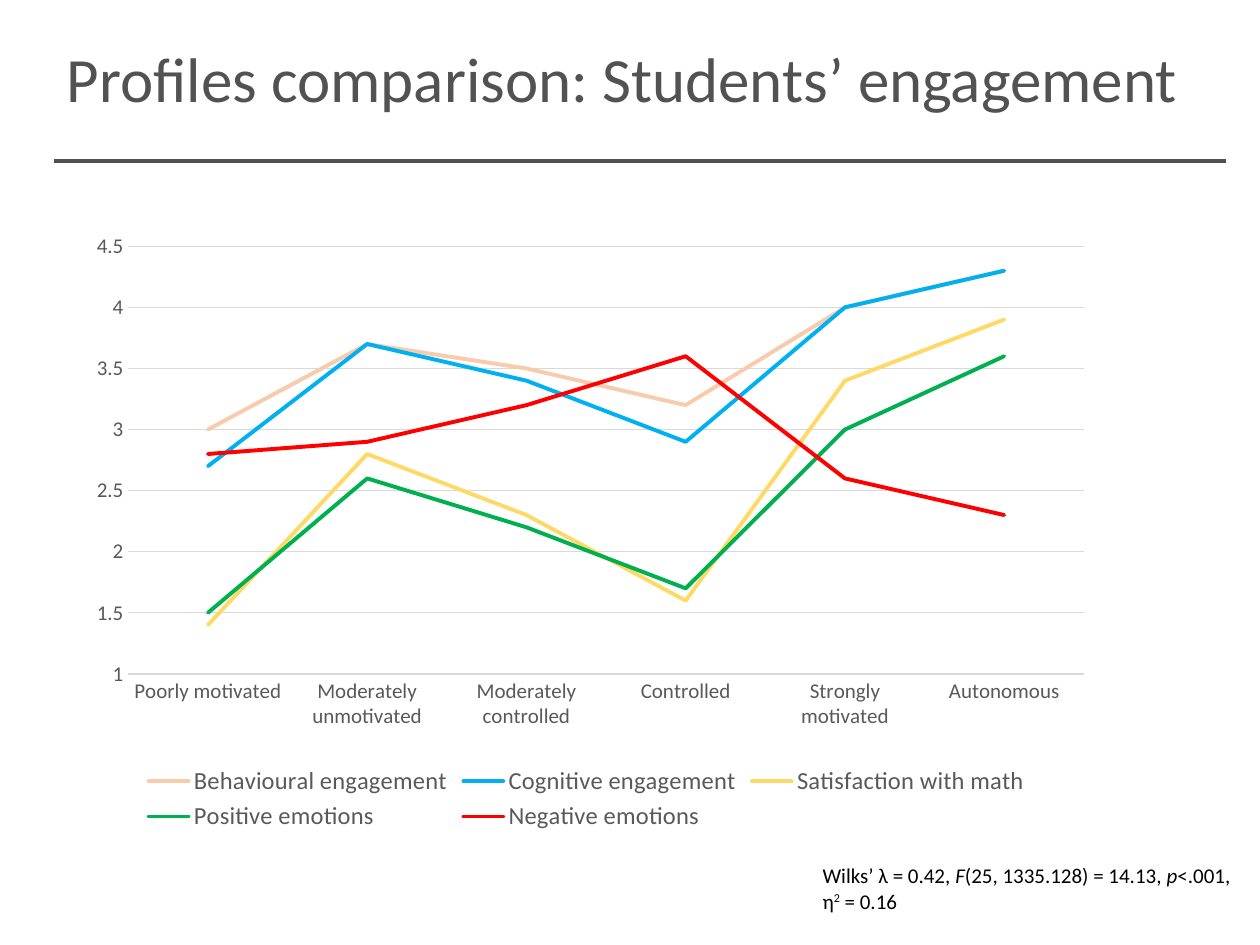
"""Build a slide that compares motivation profiles by students' engagement."""
from dataclasses import dataclass

from lxml import etree
from pptx import Presentation
from pptx.chart.data import CategoryChartData
from pptx.dml.color import RGBColor
from pptx.enum.chart import XL_CHART_TYPE, XL_LEGEND_POSITION, XL_MARKER_STYLE, XL_TICK_MARK
from pptx.enum.shapes import MSO_CONNECTOR
from pptx.enum.text import MSO_ANCHOR, PP_ALIGN
from pptx.oxml.ns import qn
from pptx.util import Inches, Pt

LINE_CHART = XL_CHART_TYPE.LINE
LEGEND_BOTTOM = XL_LEGEND_POSITION.BOTTOM
NO_MARKER = XL_MARKER_STYLE.NONE
NO_TICK = XL_TICK_MARK.NONE
STRAIGHT = MSO_CONNECTOR.STRAIGHT
MIDDLE = MSO_ANCHOR.MIDDLE
LEFT = PP_ALIGN.LEFT
TITLE_ONLY = 5


@dataclass(frozen=True)
class Theme:
    font: str = "Calibri"
    heading: str = "525252"
    label: str = "595959"
    grid: str = "D9D9D9"
    ink: str = "000000"
    title_size: float = 36
    legend_size: float = 14
    body_size: float = 12
    thick: float = 2.25
    thin: float = 0.75


@dataclass(frozen=True)
class Measure:
    name: str
    color: str
    means: tuple[float, ...]


@dataclass(frozen=True)
class Span:
    text: str
    italic: bool = False
    baseline: int = 0


THEME = Theme()
PROFILES = (
    "Poorly motivated", "Moderately unmotivated", "Moderately controlled",
    "Controlled", "Strongly motivated", "Autonomous",
)
MEASURES = (
    Measure("Behavioural engagement", "F8CBAD", (3, 3.7, 3.5, 3.2, 4, 4.3)),
    Measure("Cognitive engagement", "00B0F0", (2.7, 3.7, 3.4, 2.9, 4, 4.3)),
    Measure("Satisfaction with math", "FFD966", (1.4, 2.8, 2.3, 1.6, 3.4, 3.9)),
    Measure("Positive emotions", "00B050", (1.5, 2.6, 2.2, 1.7, 3, 3.6)),
    Measure("Negative emotions", "FF0000", (2.8, 2.9, 3.2, 3.6, 2.6, 2.3)),
)
PLOT_AREA = {"x": 0.056, "y": 0.038, "w": 0.926, "h": 0.697}
STATISTICS = (
    Span("Wilks’ λ = 0.42,"), Span(" F", italic=True),
    Span("(25, 1335.128) = 14.13, "), Span("p", italic=True),
    Span("<.001, η"), Span("2", baseline=30), Span(" = 0.16"),
)


def style_font(font, size: float, color: str) -> None:
    """Apply the theme typeface with a size and colour."""
    font.name = THEME.font
    font.size = Pt(size)
    font.bold = False
    font.color.rgb = RGBColor.from_string(color)


def style_line(line, color: str, width: float) -> None:
    """Set a solid line colour and width."""
    line.color.rgb = RGBColor.from_string(color)
    line.width = Pt(width)


def write_text(box, spans: tuple[Span, ...], *, size: float, color: str, anchor=None) -> None:
    """Write formatted spans as the single paragraph of a box."""
    frame = box.text_frame
    frame.word_wrap = True
    if anchor is not None:
        frame.vertical_anchor = anchor
    para = frame.paragraphs[0]
    para.alignment = LEFT
    for span in spans:
        run = para.add_run()
        run.text = span.text
        style_font(run.font, size, color)
        run.font.italic = span.italic
        if span.baseline:
            run.font._element.set("baseline", str(span.baseline * 1000))


def place_plot_area(chart) -> None:
    """Fix the inner plot area as fractions of the chart."""
    plot_area = chart._chartSpace.chart.plotArea
    layout = plot_area.find(qn("c:layout"))
    if layout is None:
        layout = etree.Element(qn("c:layout"))
        plot_area.insert(0, layout)
    manual = etree.SubElement(layout, qn("c:manualLayout"))
    settings = {"layoutTarget": "inner", "xMode": "edge", "yMode": "edge", **PLOT_AREA}
    for tag, value in settings.items():
        etree.SubElement(manual, qn(f"c:{tag}")).set("val", str(value))


def add_engagement_chart(slide) -> None:
    """Draw one line per engagement measure across the profiles."""
    data = CategoryChartData()
    data.categories = PROFILES
    for measure in MEASURES:
        data.add_series(measure.name, measure.means)
    chart = slide.shapes.add_chart(
        LINE_CHART, Inches(0.56), Inches(1.77), Inches(8.19), Inches(4.87), data
    ).chart
    chart.has_title = False
    style_font(chart.font, THEME.body_size, THEME.label)
    chart.has_legend = True
    chart.legend.position = LEGEND_BOTTOM
    chart.legend.include_in_layout = False
    style_font(chart.legend.font, THEME.legend_size, THEME.label)
    place_plot_area(chart)

    for axis in (chart.category_axis, chart.value_axis):
        axis.major_tick_mark = NO_TICK
        axis.minor_tick_mark = NO_TICK
        style_font(axis.tick_labels.font, THEME.body_size, THEME.label)
    style_line(chart.category_axis.format.line, THEME.grid, THEME.thin)
    values = chart.value_axis
    values.minimum_scale = 1
    values.maximum_scale = 4.5
    values.major_unit = 0.5
    values.format.line.fill.background()
    style_line(values.major_gridlines.format.line, THEME.grid, THEME.thin)

    plot = chart.plots[0]
    plot.vary_by_categories = False
    for series, measure in zip(plot.series, MEASURES):
        series.smooth = False
        series.marker.style = NO_MARKER
        style_line(series.format.line, measure.color, THEME.thick)
        for outline in series._element.xpath("c:spPr/a:ln"):
            outline.set("cap", "rnd")


def add_rule(slide) -> None:
    """Draw the line under the title."""
    rule = slide.shapes.add_connector(
        STRAIGHT, Inches(0.43), Inches(1.28), Inches(9.73), Inches(1.28)
    )
    style_line(rule.line, THEME.heading, THEME.thick)
    etree.SubElement(rule._element.spPr, qn("a:effectLst"))


def main() -> None:
    """Assemble and save the deck."""
    deck = Presentation()
    deck.slide_width, deck.slide_height = Inches(10), Inches(7.5)
    page = deck.slides.add_slide(deck.slide_layouts[TITLE_ONLY])
    add_engagement_chart(page)
    title = page.shapes.title
    title.left, title.top = Inches(0.43), Inches(0.11)
    title.width, title.height = Inches(9.46), Inches(1.01)
    write_text(title, (Span("Profiles comparison: Students’ engagement"),),
               size=THEME.title_size, color=THEME.heading, anchor=MIDDLE)
    add_rule(page)
    note = page.shapes.add_textbox(Inches(6.43), Inches(6.8), Inches(3.55), Inches(0.5))
    write_text(note, STATISTICS, size=THEME.body_size, color=THEME.ink)
    deck.save("out.pptx")


if __name__ == "__main__":
    main()
